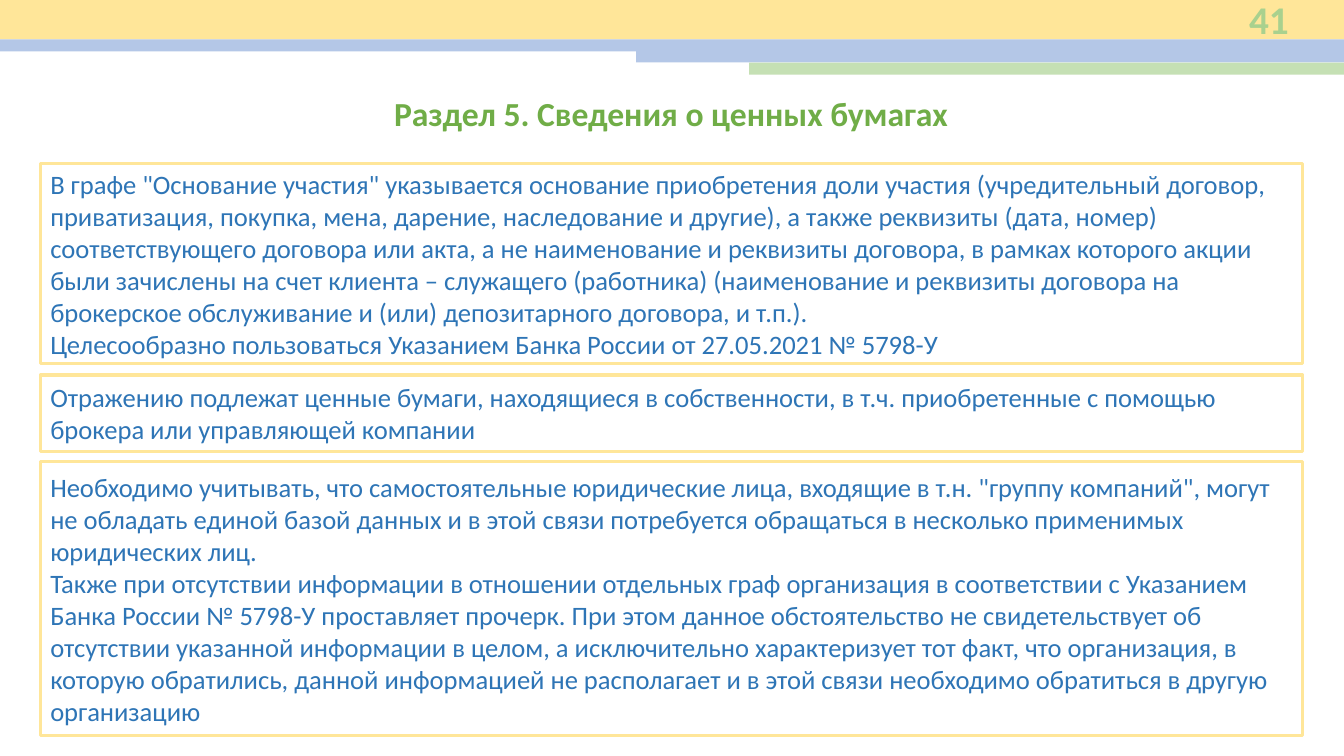
from dataclasses import dataclass

from pptx import Presentation
from pptx.dml.color import RGBColor
from pptx.enum.shapes import MSO_SHAPE
from pptx.enum.text import MSO_ANCHOR, MSO_AUTO_SIZE, PP_ALIGN
from pptx.shapes.autoshape import Shape
from pptx.slide import Slide
from pptx.text.text import TextFrame
from pptx.util import Inches, Pt

FONT = "Calibri"
COLORS = {
    "yellow": "FFE699",
    "blue": "B4C7E7",
    "light_green": "C5E0B4",
    "number": "A9D18E",
    "title": "70AD47",
    "text": "2E75B6",
}
SLIDE_WIDTH = 13.33
PANEL_LEFT, PANEL_WIDTH = 0.4, 12.52


@dataclass
class Band:
    """A header stripe that runs from left to the right slide edge."""
    left: float
    top: float
    height: float
    color: str


@dataclass
class Panel:
    top: float
    height: float
    paragraphs: list[str]


BANDS = [
    Band(0, 0, 0.39, "yellow"),
    Band(0, 0.39, 0.12, "blue"),
    Band(6.31, 0.5, 0.12, "blue"),
    Band(7.43, 0.62, 0.12, "light_green"),
]

PANELS = [
    Panel(1.62, 1.99, [
        "В графе \"Основание участия\" указывается основание приобретения доли участия "
        "(учредительный договор, приватизация, покупка, мена, дарение, наследование и другие), "
        "а также реквизиты (дата, номер) соответствующего договора или акта, а не наименование "
        "и реквизиты договора, в рамках которого акции были зачислены на счет клиента – "
        "служащего (работника) (наименование и реквизиты договора на брокерское обслуживание "
        "и (или) депозитарного договора, и т.п.).",
        "Целесообразно пользоваться Указанием Банка России от 27.05.2021 № 5798-У",
    ]),
    Panel(3.72, 0.76, [
        "Отражению подлежат ценные бумаги, находящиеся в собственности, в т.ч. приобретенные "
        "с помощью брокера или управляющей компании",
    ]),
    Panel(4.58, 2.72, [
        "Необходимо учитывать, что самостоятельные юридические лица, входящие в т.н. \"группу "
        "компаний\", могут не обладать единой базой данных и в этой связи потребуется обращаться "
        "в несколько применимых юридических лиц.",
        "Также при отсутствии информации в отношении отдельных граф организация в соответствии "
        "с Указанием Банка России № 5798-У проставляет прочерк. При этом данное обстоятельство "
        "не свидетельствует об отсутствии указанной информации в целом, а исключительно "
        "характеризует тот факт, что организация, в которую обратились, данной информацией "
        "не располагает и в этой связи необходимо обратиться в другую организацию",
    ]),
]


def rgb(name: str) -> RGBColor:
    return RGBColor.from_string(COLORS[name])


def add_rectangle(slide: Slide, left: float, top: float, width: float, height: float) -> Shape:
    shape = slide.shapes.add_shape(
        MSO_SHAPE.RECTANGLE, Inches(left), Inches(top), Inches(width), Inches(height))
    shape.shadow.inherit = False
    return shape


def write_text(text_frame: TextFrame, paragraphs: list[str], size: float, color: str,
               alignment: PP_ALIGN, anchor: MSO_ANCHOR, bold: bool = False) -> None:
    text_frame.text = "\n".join(paragraphs)
    text_frame.word_wrap = True
    text_frame.auto_size = MSO_AUTO_SIZE.NONE
    text_frame.vertical_anchor = anchor
    for paragraph in text_frame.paragraphs:
        paragraph.alignment = alignment
        for run in paragraph.runs:
            run.font.name = FONT
            run.font.size = Pt(size)
            run.font.bold = bold
            run.font.color.rgb = rgb(color)


def add_band(slide: Slide, band: Band) -> None:
    shape = add_rectangle(slide, band.left, band.top, SLIDE_WIDTH - band.left, band.height)
    shape.fill.solid()
    shape.fill.fore_color.rgb = rgb(band.color)
    shape.line.fill.background()


def add_page_number(slide: Slide, number: str) -> None:
    box = slide.shapes.add_textbox(Inches(11.44), Inches(0), Inches(1.44), Inches(0.38))
    write_text(box.text_frame, [number], 28, "number", PP_ALIGN.RIGHT, MSO_ANCHOR.MIDDLE, bold=True)


def set_title(slide: Slide, text: str) -> None:
    title = slide.shapes.title
    title.left, title.top = Inches(0.59), Inches(0.87)
    title.width, title.height = Inches(12.13), Inches(0.5)
    write_text(title.text_frame, [text], 24, "title", PP_ALIGN.CENTER, MSO_ANCHOR.TOP, bold=True)


def add_panel(slide: Slide, panel: Panel) -> None:
    shape = add_rectangle(slide, PANEL_LEFT, panel.top, PANEL_WIDTH, panel.height)
    shape.fill.background()
    shape.line.color.rgb = rgb("yellow")
    shape.line.width = Pt(2.25)
    write_text(shape.text_frame, panel.paragraphs, 19, "text", PP_ALIGN.LEFT, MSO_ANCHOR.MIDDLE)


def main() -> None:
    presentation = Presentation()
    presentation.slide_width = Inches(SLIDE_WIDTH)
    presentation.slide_height = Inches(7.5)
    title_only_layout = presentation.slide_layouts[5]
    slide = presentation.slides.add_slide(title_only_layout)

    for band in BANDS:
        add_band(slide, band)
    add_page_number(slide, "41")
    set_title(slide, "Раздел 5. Сведения о ценных бумагах")
    for panel in PANELS:
        add_panel(slide, panel)

    presentation.save("out.pptx")


if __name__ == "__main__":
    main()
